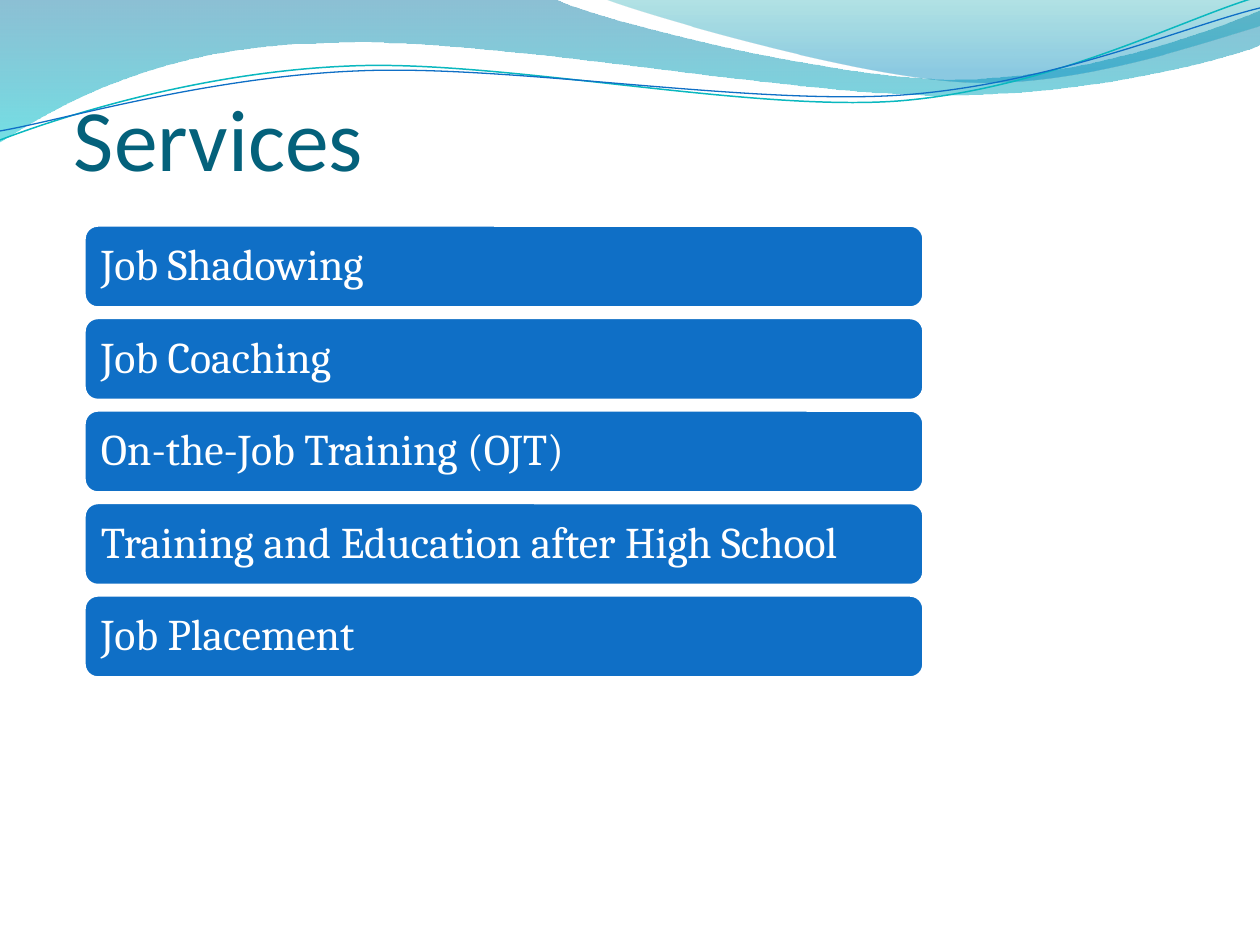
from dataclasses import dataclass

from lxml.etree import SubElement
from pptx import Presentation
from pptx.dml.color import RGBColor
from pptx.enum.shapes import MSO_SHAPE as Preset
from pptx.enum.text import MSO_ANCHOR as Anchor, PP_ALIGN as Align
from pptx.oxml.ns import qn
from pptx.util import Emu, Pt

PX_PER_INCH = 126
EMU_PER_PX = 914400 / PX_PER_INCH

WHITE = RGBColor(0xFF, 0xFF, 0xFF)
BLUE = RGBColor(0x0F, 0x6F, 0xC6)
TEAL = RGBColor(0x0A, 0xB8, 0xBF)
TITLE_BLUE = RGBColor(0x04, 0x61, 0x7B)
DEEP_BLUE = RGBColor(0x00, 0x74, 0xA1)
AQUA = RGBColor(0x00, 0xC6, 0xCF)
SEA_GREEN = RGBColor(0x00, 0xA1, 0xA9)
SKY_BLUE = RGBColor(0x00, 0x8B, 0xBF)

Point = tuple[int, int]
Segment = tuple[Point, ...]


@dataclass(frozen=True)
class GradientStop:
    position: float
    color: RGBColor
    opacity: int


@dataclass(frozen=True)
class Ribbon:
    start: Point
    segments: tuple[Segment, ...]
    stops: tuple[GradientStop, GradientStop]


@dataclass(frozen=True)
class WaveLine:
    start: Point
    segments: tuple[Segment, ...]
    color: RGBColor
    width: float


RIBBONS = (
    Ribbon(
        (-1, -1),
        (
            ((554, -1),),
            ((600, 21), (837, 79), (955, 79)),
            ((1075, 79), (1207, 33), (1260, 11)),
            ((1261, 45),),
            ((1239, 55), (1096, 96), (940, 95)),
            ((784, 95), (481, 35), (324, 43)),
            ((163, 45), (58, 105), (-1, 142)),
        ),
        (GradientStop(0, DEEP_BLUE, 45), GradientStop(1, AQUA, 55)),
    ),
    Ribbon(
        (604, -1),
        (
            ((641, 14), (859, 78), (969, 82)),
            ((1079, 87), (1211, 40), (1260, 26)),
            ((1260, 0),),
        ),
        (GradientStop(0, SEA_GREEN, 30), GradientStop(0.8, SKY_BLUE, 45)),
    ),
)

WAVE_LINES = (
    WaveLine(
        (0, 140),
        (
            ((60, 117), (199, 72), (349, 66)),
            ((498, 59), (747, 112), (898, 101)),
            ((1050, 89), (1182, 19), (1257, -3)),
        ),
        TEAL, 0.85,
    ),
    WaveLine(
        (0, 131),
        (
            ((59, 121), (207, 77), (357, 71)),
            ((508, 64), (752, 106), (903, 95)),
            ((1053, 84), (1186, 26), (1260, 8)),
        ),
        BLUE, 0.75,
    ),
)

SERVICES = (
    "Job Shadowing",
    "Job Coaching",
    "On-the-Job Training (OJT)",
    "Training and Education after High School",
    "Job Placement",
)
BAR_LEFT, BAR_WIDTH, BAR_HEIGHT = 84, 840, 83
FIRST_BAR_TOP, LAST_BAR_TOP = 225, 595


def px(length: float) -> Emu:
    return Emu(round(length * EMU_PER_PX))


def draw_outline(slide, start: Point, segments: tuple[Segment, ...], closed: bool):
    builder = slide.shapes.build_freeform(px(start[0]), px(start[1]))
    for segment in segments:
        builder.add_line_segments([(px(x), px(y)) for x, y in segment], close=False)
    if closed:
        builder.add_line_segments([], close=True)
    shape = builder.convert_to_shape()
    shape.shadow.inherit = False
    lines = iter(list(shape.element.spPr.iter(qn("a:lnTo"))))
    for segment in segments:
        steps = [next(lines) for _ in segment]
        if len(steps) == 3:
            curve = steps[0].makeelement(qn("a:cubicBezTo"))
            steps[0].addprevious(curve)
            for step in steps:
                curve.append(step[0])
                step.getparent().remove(step)
    return shape


def draw_ribbon(slide, ribbon: Ribbon) -> None:
    shape = draw_outline(slide, ribbon.start, ribbon.segments, closed=True)
    shape.line.fill.background()
    shape.fill.gradient()
    shape.fill.gradient_angle = 270
    for gradient_stop, stop in zip(shape.fill.gradient_stops, ribbon.stops):
        gradient_stop.position = stop.position
        gradient_stop.color.rgb = stop.color
    colors = shape.element.spPr.iter(qn("a:srgbClr"))
    for color, stop in zip(colors, ribbon.stops):
        SubElement(color, qn("a:alpha"), val=str(stop.opacity * 1000))


def draw_wave_line(slide, wave: WaveLine) -> None:
    shape = draw_outline(slide, wave.start, wave.segments, closed=False)
    shape.fill.background()
    shape.line.color.rgb = wave.color
    shape.line.width = Pt(wave.width)


def write_text(shape, text: str, *, font: str, size: float, color: RGBColor,
               anchor: Anchor, insets: tuple[int, int, int, int],
               line_spacing: float = 1.0) -> None:
    frame = shape.text_frame
    frame.word_wrap = True
    frame.vertical_anchor = anchor
    (frame.margin_left, frame.margin_top,
     frame.margin_right, frame.margin_bottom) = map(px, insets)
    paragraph = frame.paragraphs[0]
    paragraph.text = text
    paragraph.alignment = Align.LEFT
    paragraph.line_spacing = line_spacing
    paragraph.font.name = font
    paragraph.font.size = Pt(size)
    paragraph.font.color.rgb = color


def draw_service_bar(slide, text: str, top: float) -> None:
    bar = slide.shapes.add_shape(
        Preset.ROUNDED_RECTANGLE, px(BAR_LEFT), px(top), px(BAR_WIDTH), px(BAR_HEIGHT))
    bar.shadow.inherit = False
    bar.fill.solid()
    bar.fill.fore_color.rgb = BLUE
    bar.line.color.rgb = WHITE
    bar.line.width = Pt(2)
    write_text(bar, text, font="Cambria", size=25, color=WHITE, anchor=Anchor.MIDDLE,
               insets=(13, 13, 13, 13), line_spacing=0.9)


def main() -> None:
    presentation = Presentation()
    presentation.slide_width = px(1260)
    presentation.slide_height = px(945)
    slide = presentation.slides.add_slide(presentation.slide_layouts[6])
    for ribbon in RIBBONS:
        draw_ribbon(slide, ribbon)
    for wave in WAVE_LINES:
        draw_wave_line(slide, wave)
    title = slide.shapes.add_textbox(px(74), px(42), px(1124), px(147))
    write_text(title, "Services", font="Calibri", size=50, color=TITLE_BLUE,
               anchor=Anchor.BOTTOM, insets=(0, 6, 0, 0))
    bar_step = (LAST_BAR_TOP - FIRST_BAR_TOP) / (len(SERVICES) - 1)
    for index, service in enumerate(SERVICES):
        draw_service_bar(slide, service, FIRST_BAR_TOP + index * bar_step)
    presentation.save("out.pptx")


if __name__ == "__main__":
    main()
